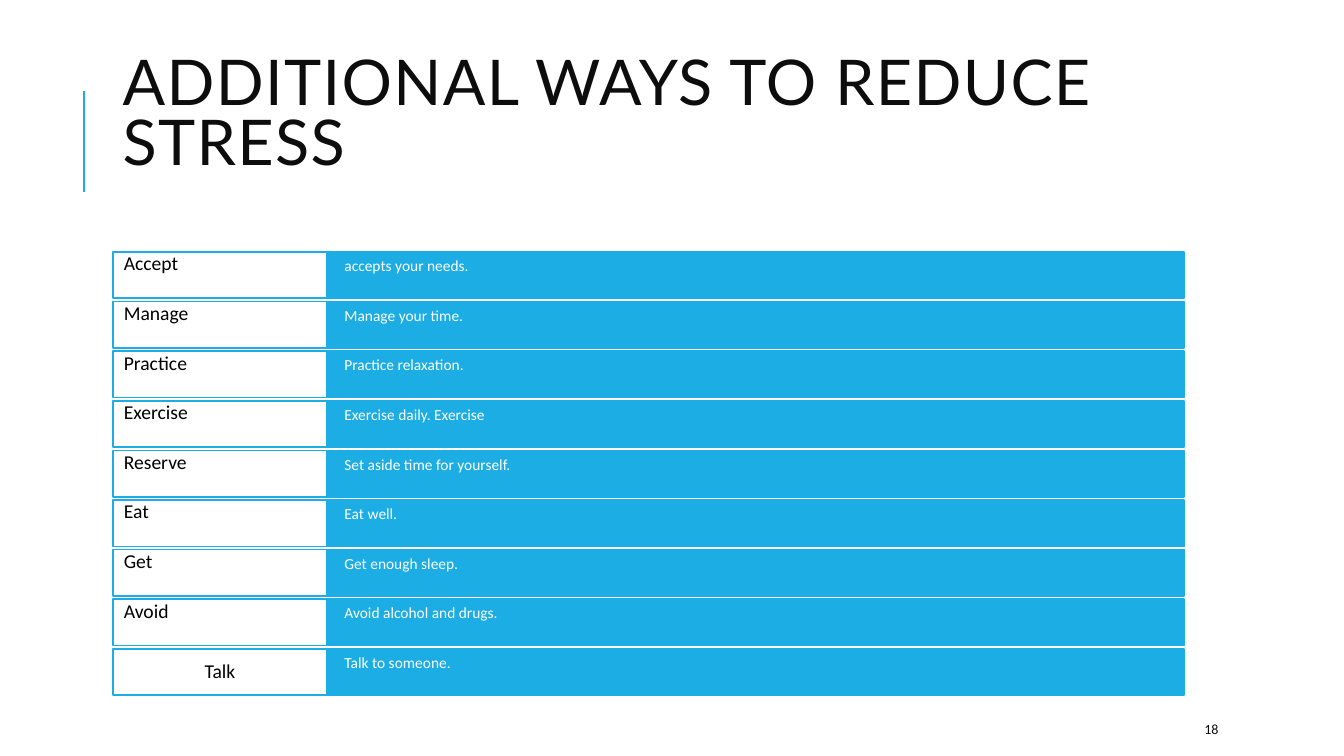
import dataclasses

import pptx
import pptx.dml.color
import pptx.enum.shapes
import pptx.enum.text
import pptx.oxml
import pptx.oxml.ns
import pptx.util

Cm = pptx.util.Cm
Align = pptx.enum.text.PP_ALIGN
Anchor = pptx.enum.text.MSO_ANCHOR


@dataclasses.dataclass(frozen=True)
class Theme:
    accent: str = "1CADE4"
    white: str = "FFFFFF"
    black: str = "000000"
    ink: str = "0D0D0D"
    title_font: str = "Lato"
    body_font: str = "Calibri"
    title_size: float = 45
    label_size: float = 14
    detail_size: float = 11
    number_size: float = 10
    rule_width: float = 1.5
    border_width: float = 1.25


THEME = Theme()

WAYS = [
    ("Accept", "accepts your needs."),
    ("Manage", "Manage your time."),
    ("Practice", "Practice relaxation."),
    ("Exercise", "Exercise daily. Exercise"),
    ("Reserve", "Set aside time for yourself."),
    ("Eat", "Eat well."),
    ("Get", "Get enough sleep."),
    ("Avoid", "Avoid alcohol and drugs."),
    ("Talk", "Talk to someone."),
]
LABEL_LEFT, LABEL_WIDTH = 2.84, 5.41
DETAIL_LEFT, DETAIL_WIDTH = 8.25, 21.59
FIRST_ROW_TOP, ROW_HEIGHT, ROW_PITCH = 6.35, 1.17, 1.25


def rgb(value):
    return pptx.dml.color.RGBColor.from_string(value)


def write_text(shape, text, *, size, color, font=THEME.body_font, align=Align.LEFT,
               anchor=Anchor.MIDDLE, insets=(0.25, 0.13, 0.25, 0.13),
               line_spacing=1.0, tracking=0):
    frame = shape.text_frame
    frame.word_wrap = True
    frame.vertical_anchor = anchor
    (frame.margin_left, frame.margin_top,
     frame.margin_right, frame.margin_bottom) = [Cm(inset) for inset in insets]
    paragraph = frame.paragraphs[0]
    paragraph.alignment = align
    paragraph.line_spacing = line_spacing
    run = paragraph.add_run()
    run.text = text
    run.font.name = font
    run.font.size = pptx.util.Pt(size)
    run.font.color.rgb = rgb(color)
    if tracking:
        run.font._element.set("spc", str(tracking * 100))


def add_text(slide, text, left, top, width, height, **text_format):
    box = slide.shapes.add_textbox(Cm(left), Cm(top), Cm(width), Cm(height))
    write_text(box, text, **text_format)


def add_panel(slide, text, left, top, width, *, fill, **text_format):
    panel = slide.shapes.add_shape(
        pptx.enum.shapes.MSO_SHAPE.RECTANGLE,
        Cm(left), Cm(top), Cm(width), Cm(ROW_HEIGHT))
    panel.shadow.inherit = False
    panel.fill.solid()
    panel.fill.fore_color.rgb = rgb(fill)
    panel.line.color.rgb = rgb(THEME.accent)
    panel.line.width = pptx.util.Pt(THEME.border_width)
    write_text(panel, text, line_spacing=0.9, **text_format)


def add_rule(slide, x, top, bottom):
    rule = slide.shapes.add_connector(
        pptx.enum.shapes.MSO_CONNECTOR.STRAIGHT, Cm(x), Cm(bottom), Cm(x), Cm(top))
    rule.line.color.rgb = rgb(THEME.accent)
    rule.line.width = pptx.util.Pt(THEME.rule_width)
    properties = rule._element.find(pptx.oxml.ns.qn("p:spPr"))
    properties.append(pptx.oxml.parse_xml(
        f"<a:effectLst {pptx.oxml.ns.nsdecls('a')}/>"))


def add_way(slide, index, label, detail):
    top = FIRST_ROW_TOP + index * ROW_PITCH
    is_last = index == len(WAYS) - 1
    add_panel(slide, detail, DETAIL_LEFT, top, DETAIL_WIDTH, fill=THEME.accent,
              size=THEME.detail_size, color=THEME.white, anchor=Anchor.TOP,
              insets=(0.43, 0.16, 0.43, 0.16))
    add_panel(slide, label, LABEL_LEFT, top, LABEL_WIDTH, fill=THEME.white,
              size=THEME.label_size, color=THEME.black,
              align=Align.CENTER if is_last else Align.LEFT,
              anchor=Anchor.MIDDLE if is_last else Anchor.TOP,
              insets=(0.28, 0.05, 0.28, 0.05))


def main():
    presentation = pptx.Presentation()
    presentation.slide_width = Cm(33.87)
    presentation.slide_height = Cm(19.05)
    slide = presentation.slides.add_slide(presentation.slide_layouts[6])

    add_rule(slide, 2.11, 2.29, 4.83)
    add_text(slide, "ADDITIONAL WAYS TO REDUCE STRESS", 2.84, 1.63, 27, 4.17,
             size=THEME.title_size, color=THEME.ink, font=THEME.title_font,
             insets=(0.25, 0, 0.25, 1.52), line_spacing=0.8, tracking=1)
    add_text(slide, "18", 30.1, 17.98, 2.69, 0.76,
             size=THEME.number_size, color=THEME.ink)
    for index, (label, detail) in enumerate(WAYS):
        add_way(slide, index, label, detail)

    presentation.save("out.pptx")


if __name__ == "__main__":
    main()
